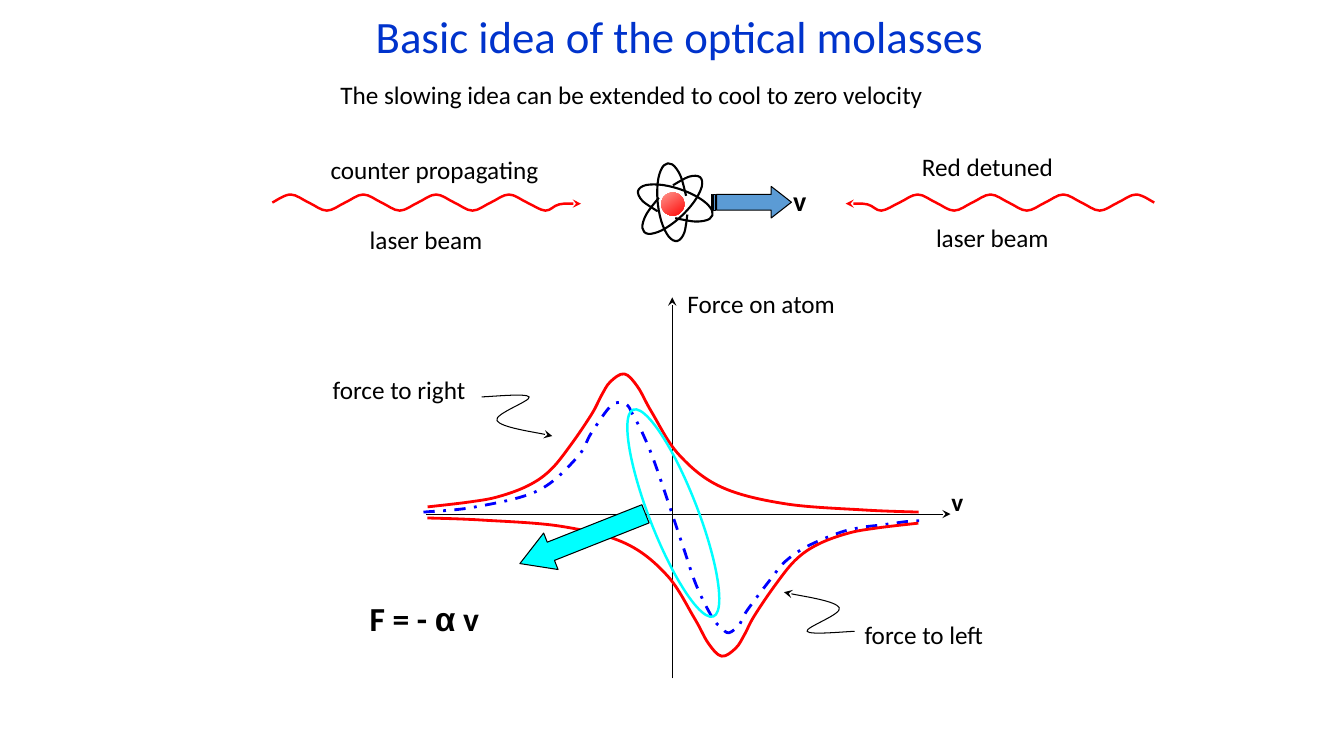
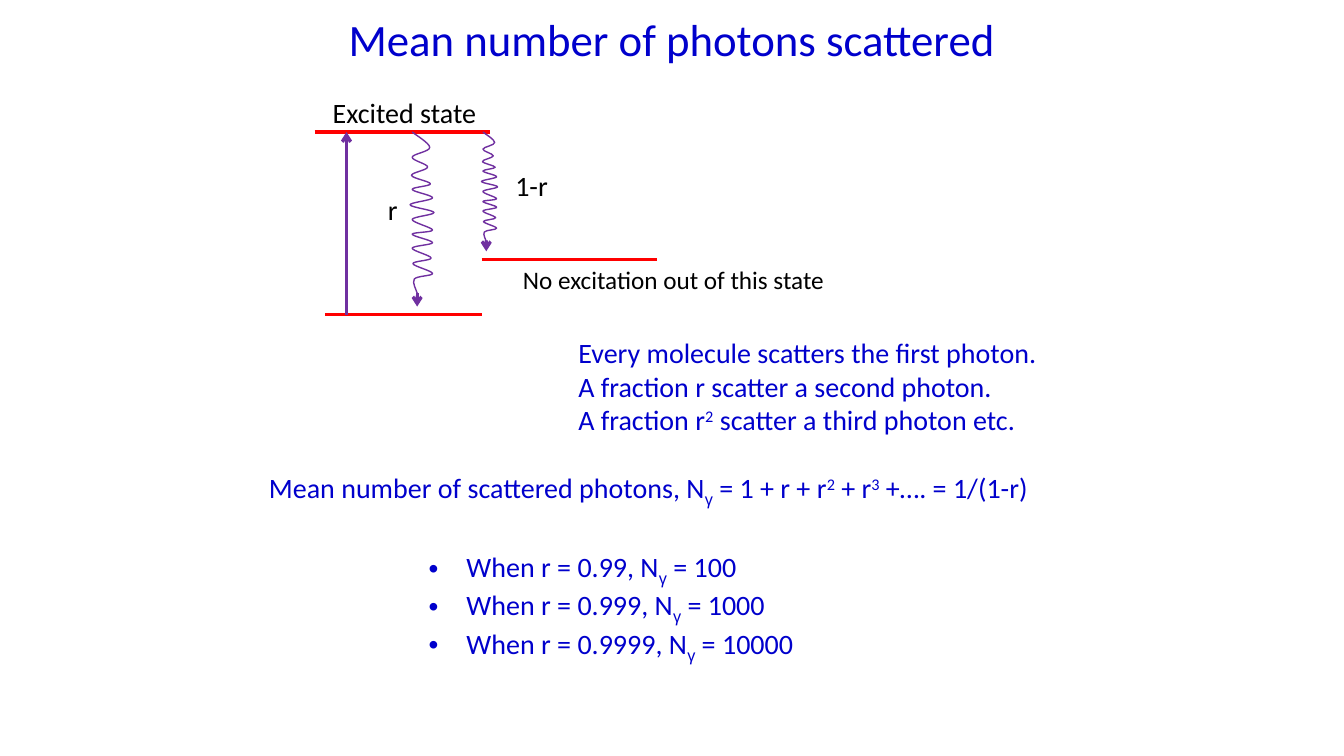
from math import cos, pi, radians, sin

from lxml.etree import SubElement
from pptx import Presentation
from pptx.dml.color import RGBColor
from pptx.enum.dml import MSO_LINE
from pptx.enum.shapes import MSO_CONNECTOR, MSO_SHAPE
from pptx.enum.text import MSO_ANCHOR, MSO_AUTO_SIZE, PP_ALIGN
from pptx.oxml.ns import qn
from pptx.util import Pt

rgb = RGBColor.from_string
BLACK, RED, CYAN, PURPLE = "000000", "FF0000", "00FFFF", "7030A0"
TITLE_BLUE, TEXT_BLUE = "0033CC", "0000CC"
BASELINES = {"γ": "-25000", "2": "30000", "3": "30000"}


def write(tf, paragraphs, size, color=BLACK, bold=False, align=None):
    """Fill a frame from lists of runs; Greek letters are Arial, lone indices are raised or lowered."""
    for i, runs in enumerate(paragraphs):
        p = tf.add_paragraph() if i else tf.paragraphs[0]
        p.alignment = align
        p.space_before = Pt(0)
        for text in runs:
            r = p.add_run()
            r.text = text
            r.font.size = Pt(size)
            r.font.bold = bold
            r.font.name = "Arial" if text in ("γ", "α") else "Calibri"
            r.font.color.rgb = rgb(color)
            if text in BASELINES:
                r._r.get_or_add_rPr().set("baseline", BASELINES[text])


def draw(s, knots, color=BLACK, width=0.75, tail=None, dash=None):
    """Draw a straight connector through two knots, or a smooth Bézier curve through more."""
    knots = [(Pt(x), Pt(y)) for x, y in knots]
    if len(knots) == 2:
        shp = s.shapes.add_connector(MSO_CONNECTOR.STRAIGHT, *knots[0], *knots[1])
    else:
        builder = s.shapes.build_freeform(*knots[0])
        builder.add_line_segments(knots[1:], close=False)
        shp = builder.convert_to_shape()
        shp.fill.background()
        path = shp._element.spPr.find(".//" + qn("a:path"))
        local = [(int(pt.get("x")), int(pt.get("y"))) for pt in path.iter(qn("a:pt"))]
        for segment in path.findall(qn("a:lnTo")):
            path.remove(segment)
        padded = [local[0], *local, local[-1]]
        for before, start, end, after in zip(padded, padded[1:], padded[2:], padded[3:]):
            bezier = SubElement(path, qn("a:cubicBezTo"))
            control1 = [b + (c - a) / 6 for a, b, c in zip(before, start, end)]
            control2 = [c - (d - b) / 6 for b, c, d in zip(start, end, after)]
            for x, y in (control1, control2, end):
                SubElement(bezier, qn("a:pt"), x=str(round(x)), y=str(round(y)))
    shp.line.color.rgb = rgb(color)
    shp.line.width = Pt(width)
    if dash:
        shp.line.dash_style = dash
    if tail:
        SubElement(shp.line._get_or_add_ln(), qn("a:tailEnd")).set("type", tail)
    SubElement(shp._element.spPr, qn("a:effectLst"))


prs = Presentation()
prs.slide_width, prs.slide_height = Pt(960), Pt(540)
molasses = prs.slides.add_slide(prs.slide_layouts[5])
photons = prs.slides.add_slide(prs.slide_layouts[1])

for s, title, color, left, top in [
    (molasses, "Basic idea of the optical molasses", TITLE_BLUE, 125.5, 1.5),
    (photons, "Mean number of photons scattered", TEXT_BLUE, 120, 3.5),
]:
    sp = s.shapes.title
    sp.left, sp.top, sp.width, sp.height = Pt(left), Pt(top), Pt(720), Pt(47.5)
    sp.text_frame.vertical_anchor = MSO_ANCHOR.MIDDLE
    sp.text_frame.auto_size = MSO_AUTO_SIZE.NONE
    write(sp.text_frame, [[title]], 32, color, align=PP_ALIGN.CENTER)

# Labels: slide, left, top, width, height, size, colour, bold, paragraphs
for s, x, y, w, h, size, color, bold, paragraphs in [
    (molasses, 236, 53.3, 436, 29, 18, BLACK, False,
     [["The slowing idea can be extended to cool to zero velocity"]]),
    (molasses, 229, 106.5, 165, 29, 18, BLACK, False, [["counter propagating"]]),
    (molasses, 257, 157, 96, 29, 18, BLACK, False, [["laser beam"]]),
    (molasses, 651.5, 104.5, 110, 29, 18, BLACK, False, [["Red detuned"]]),
    (molasses, 661.5, 155.5, 96, 29, 18, BLACK, False, [["laser beam"]]),
    (molasses, 559.5, 127.5, 24.5, 31.5, 20, BLACK, True, [["v"]]),
    (molasses, 484, 202.5, 121, 29, 18, BLACK, False, [["Force on atom"]]),
    (molasses, 230.5, 263.5, 114.5, 29, 18, BLACK, False, [["force to right"]]),
    (molasses, 610.5, 439, 104, 29, 18, BLACK, False, [["force to left"]]),
    (molasses, 672.5, 343.5, 23, 29, 18, BLACK, True, [["v"]]),
    (molasses, 257, 423.5, 94, 36.5, 24, BLACK, True, [["F = - ", "α", " v"]]),
    (photons, 230.5, 65, 118, 31.5, 20, BLACK, False, [["Excited state"]]),
    (photons, 270, 134, 21.5, 31.5, 20, BLACK, False, [["r"]]),
    (photons, 361, 116.5, 38, 31.5, 20, BLACK, False, [["1-r"]]),
    (photons, 366.5, 185, 232, 29, 18, BLACK, False, [["No excitation out of this state"]]),
    (photons, 406, 236.2, 346, 80, 20, TEXT_BLUE, False,
     [["Every molecule scatters the first photon."],
      ["A fraction r scatter a second photon."],
      ["A fraction r", "2", " scatter a third photon etc."]]),
    (photons, 185, 332.6, 567, 31.5, 20, TEXT_BLUE, False,
     [["Mean number of scattered photons, N", "γ", " = 1 + r + r", "2", " + r", "3",
       " +…. = 1/(1-r)"]]),
]:
    tb = s.shapes.add_textbox(Pt(x), Pt(y), Pt(w), Pt(h))
    write(tb.text_frame, paragraphs, size, color, bold)

# Optical molasses: counter-propagating beams, mirrored about the centre
s = molasses
beam = [(194.5 + 13 * i, 144.7 - 5.75 * sin(pi * i / 2)) for i in range(16)]
beam += [(399.5, 146), (415, 145.5)]
draw(s, beam, RED, 1.75, "stealth")
draw(s, [(1019 - x, y) for x, y in beam], RED, 1.75, "stealth")

# Force against velocity
net_force = [
    (302.5, 365.8), (339, 362.2), (384, 350.6), (412, 327), (422.6, 309), (437, 289.4),
    (447, 288.7), (452, 296), (459.4, 310.3), (468.7, 333.4), (487.4, 388.8), (497.5, 418.3),
    (509, 441.4), (514.8, 447.8), (520.6, 452), (528.5, 445.7), (533.5, 436.3), (550.8, 413.3),
    (561, 401), (576.7, 390.2), (600.5, 380.2), (616.3, 376.6), (629.3, 375), (651, 372.2),
    (662.4, 372.2)]
left_force = [
    (305.3, 370), (344, 371.5), (401, 376), (446.5, 388), (476.5, 411), (496, 441.5),
    (506, 459.5), (515.5, 468.7), (525.6, 463), (532, 453), (538.5, 440.5), (553, 419),
    (568, 400.3), (584, 389), (605.5, 381), (625.5, 377.3), (656, 373.7)]
pointer = [(344, 283.5), (378, 283.5), (355, 300.5), (394.5, 311.5)]
draw(s, net_force, "0000FF", 2, dash=MSO_LINE.DASH_DOT)
draw(s, [(304.5, 367.2), (679, 367.2)], tail="stealth")
draw(s, [(480.2, 484.5), (480.2, 212.5)], tail="stealth")
draw(s, left_force, RED, 2)
draw(s, [(961.5 - x, 735.8 - y) for x, y in left_force], RED, 2)
draw(s, pointer, tail="stealth")
draw(s, [(954.5 - x, 734.5 - y) for x, y in pointer], tail="stealth")

# Preset shapes: kind, left, top, width, height, rotation, adjustments, fill, line, line width
for kind, x, y, w, h, rotation, adjustments, fill, line, width in [
    (MSO_SHAPE.OVAL, 472.3, 137.5, 16.5, 16.5, 10.6, [], "gradient", None, 0),
    (MSO_SHAPE.STRIPED_RIGHT_ARROW, 508.3, 133.2, 57, 22.5, 0, [0.5, 0.64], "5B9BD5", BLACK, 0.75),
    (MSO_SHAPE.OVAL, 463.7, 287.3, 34.5, 158.4, 338.8, [], None, CYAN, 1.75),
    (MSO_SHAPE.LEFT_ARROW, 368, 370.8, 96.5, 28, 338.4, [0.5, 0.85], CYAN, BLACK, 0.75),
]:
    sp = s.shapes.add_shape(kind, Pt(x), Pt(y), Pt(w), Pt(h))
    sp.shadow.inherit = False
    sp.rotation = rotation
    for i, value in enumerate(adjustments):
        sp.adjustments[i] = value
    if fill == "gradient":
        sp.fill.gradient()
        sp.fill.gradient_angle = 315
        for stop, color in zip(sp.fill.gradient_stops, ("FEA298", "FE0000")):
            stop.color.rgb = rgb(color)
    elif fill:
        sp.fill.solid()
        sp.fill.fore_color.rgb = rgb(fill)
    else:
        sp.fill.background()
    if line:
        sp.line.color.rgb = rgb(line)
        sp.line.width = Pt(width)
    else:
        sp.line.fill.background()

# Electron orbits: the same open ellipse turned three ways around the nucleus
arc = [radians(83 - 33.2 * i) for i in range(11)]
for cx, cy, turn in [(482.4, 145, 18.6), (480.2, 144.4, 263.6), (480.2, 146.3, 136.1)]:
    c, d = cos(radians(turn)), sin(radians(turn))
    draw(s, [(cx + 28 * cos(t) * c - 10.4 * sin(t) * d,
              cy + 28 * cos(t) * d + 10.4 * sin(t) * c) for t in arc], BLACK, 1.5)

# Photon scattering: energy levels, excitation and two decays
s = photons
for x1, x2, y in [(232.5, 344, 224.8), (224.8, 350, 94.3), (344, 469, 185.2)]:
    draw(s, [(x1, y), (x2, y)], RED, 2.25)
draw(s, [(247.5, 224.8), (247.5, 94.3)], PURPLE, 2.25, "arrow")

decay = [
    (1.5, 0), (14, 11), (1.5, 18), (12.5, 25), (1, 31), (14.5, 37), (1.5, 41), (16, 47),
    (0, 52), (17, 57.5), (1.5, 62.5), (16, 70), (1.5, 73), (16, 79), (1.5, 83), (15, 90),
    (2, 94), (16, 101), (3, 105), (5, 115)]
for left, x_scale, y_scale, tip in [(293, 1, 1, 219), (344, 0.67, 0.68, 179.5)]:
    wave = [(left + x * x_scale, 94.3 + y * y_scale) for x, y in decay]
    draw(s, wave, PURPLE, 1)
    x, y = wave[-1]
    draw(s, [(x, y), (x, tip)], PURPLE, 2.25, "arrow")

body = s.placeholders[1]
body.left, body.top, body.width, body.height = Pt(299), Pt(389), Pt(300), Pt(92)
body.text_frame.auto_size = MSO_AUTO_SIZE.NONE
write(body.text_frame,
      [[f"When r = {r}, N", "γ", f" = {n}"]
       for r, n in [("0.99", 100), ("0.999", 1000), ("0.9999", 10000)]],
      20, TEXT_BLUE)

prs.save("out.pptx")
